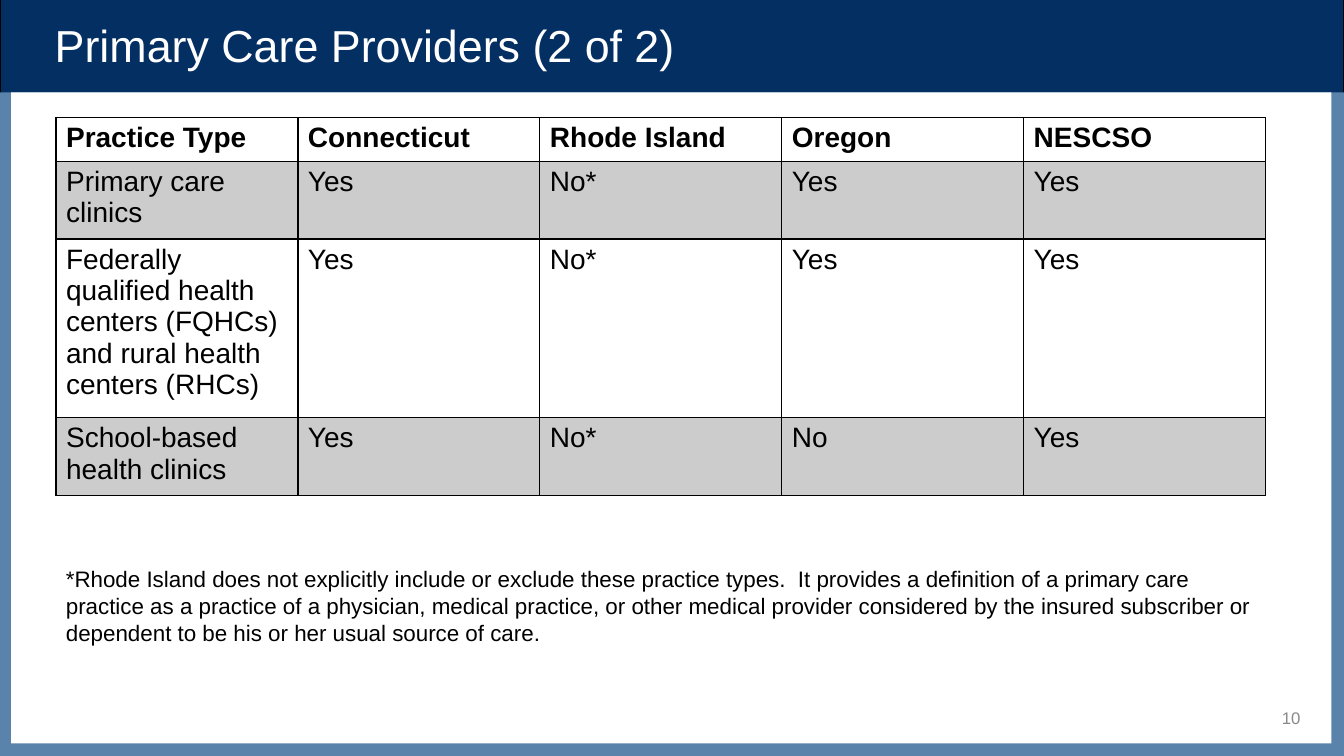
from lxml.etree import SubElement
from pptx import Presentation
from pptx.dml.color import RGBColor
from pptx.enum.shapes import MSO_SHAPE
from pptx.enum.text import MSO_ANCHOR, PP_ALIGN
from pptx.oxml import parse_xml
from pptx.oxml.ns import nsdecls, qn
from pptx.util import Pt

COLORS = {
    "navy": "042F63",
    "frame": "5983AA",
    "white": "FFFFFF",
    "black": "000000",
    "gray": "898989",
}
FONT = "Arial"
SLIDE_W, SLIDE_H = 960, 540
BANNER_H = 67
ROW_HEIGHTS = [31, 55.5, 127.5, 55.5]
SHADE_ALPHA = 20000  # 20 % black

PRACTICES = [
    ["Practice Type", "Connecticut", "Rhode Island", "Oregon", "NESCSO"],
    ["Primary care clinics", "Yes", "No*", "Yes", "Yes"],
    ["Federally qualified health centers (FQHCs) and rural health centers (RHCs)",
     "Yes", "No*", "Yes", "Yes"],
    ["School-based health clinics", "Yes", "No*", "No", "Yes"],
]
FOOTNOTE = (
    "*Rhode Island does not explicitly include or exclude these practice types.  "
    "It provides a definition of a primary care practice as a practice of a physician, "
    "medical practice, or other medical provider considered by the insured subscriber "
    "or dependent to be his or her usual source of care."
)


def rgb(name):
    return RGBColor.from_string(COLORS[name])


def add_run(paragraph, text, size, color, bold=False):
    run = paragraph.add_run()
    run.text = text
    run.font.name = FONT
    run.font.size = Pt(size)
    run.font.bold = bold
    run.font.color.rgb = rgb(color)


def add_panel(slide, box, color, outline=None):
    panel = slide.shapes.add_shape(MSO_SHAPE.RECTANGLE, *map(Pt, box))
    panel.shadow.inherit = False
    panel.fill.solid()
    panel.fill.fore_color.rgb = rgb(color)
    if outline:
        panel.line.color.rgb = rgb(outline)
        panel.line.width = Pt(0.75)
    else:
        panel.line.fill.background()


def add_text(slide, box, text, size, color, anchor=MSO_ANCHOR.TOP, align=PP_ALIGN.LEFT):
    frame = slide.shapes.add_textbox(*map(Pt, box)).text_frame
    frame.word_wrap = True
    frame.vertical_anchor = anchor
    paragraph = frame.paragraphs[0]
    paragraph.alignment = align
    add_run(paragraph, text, size, color)


def add_frame(slide, box):
    """Navy banner over a white page with a blue border."""
    left, top, width, height = box
    margin = 8
    page_top, page_h = top + BANNER_H - 1, height - BANNER_H + 1
    add_panel(slide, (left, top, width, BANNER_H), "navy", "black")
    add_panel(slide, (left, page_top, width, page_h), "frame")
    add_panel(slide, (left + margin, page_top, width - 2 * margin - 1, page_h - margin - 1),
              "white")


def style_cell(cell, shaded):
    if shaded:
        cell.fill.solid()
        cell.fill.fore_color.rgb = rgb("black")
    else:
        cell.fill.background()
    properties = cell._tc.get_or_add_tcPr()
    for color in properties.iter(qn("a:srgbClr")):
        SubElement(color, qn("a:alpha"), val=str(SHADE_ALPHA))
    # Borders come before the fill
    for position, side in enumerate("LRTB"):
        properties.insert(position, parse_xml(
            f'<a:ln{side} {nsdecls("a")} w="{Pt(1)}"><a:solidFill>'
            f'<a:srgbClr val="{COLORS["black"]}"/></a:solidFill></a:ln{side}>'))


def add_practice_table(slide, box):
    table = slide.shapes.add_table(
        len(PRACTICES), len(PRACTICES[0]), *map(Pt, box)).table
    table.first_row = table.horz_banding = False
    for column in table.columns:
        column.width = Pt(box[2] / len(PRACTICES[0]))
    for row_no, (row, height) in enumerate(zip(table.rows, ROW_HEIGHTS)):
        row.height = Pt(height)
        for cell, text in zip(row.cells, PRACTICES[row_no]):
            style_cell(cell, shaded=row_no % 2 == 1)
            add_run(cell.text_frame.paragraphs[0], text, 20, "black", bold=row_no == 0)


def build_slide(slide, box):
    left, top, width, height = box
    content_left, content_w = left + 40, 864
    add_frame(slide, box)
    # Title
    add_text(slide, (left + 32, top + 6, 896, 52), "Primary Care Providers (2 of 2)",
             32, "white", MSO_ANCHOR.MIDDLE)
    # Page number
    add_text(slide, (left + width - 80, top + height - 36, 56, 18), "10",
             12, "gray", MSO_ANCHOR.MIDDLE, PP_ALIGN.RIGHT)
    # Footnote and table
    add_text(slide, (content_left, top + 400, content_w, 65), FOOTNOTE, 16, "black")
    add_practice_table(slide, (content_left, top + 84, content_w, sum(ROW_HEIGHTS)))


def main():
    deck = Presentation()
    deck.slide_width, deck.slide_height = Pt(SLIDE_W), Pt(SLIDE_H)
    slide = deck.slides.add_slide(deck.slide_layouts[6])
    build_slide(slide, (0, 0, SLIDE_W, SLIDE_H))
    deck.save("out.pptx")


if __name__ == "__main__":
    main()
